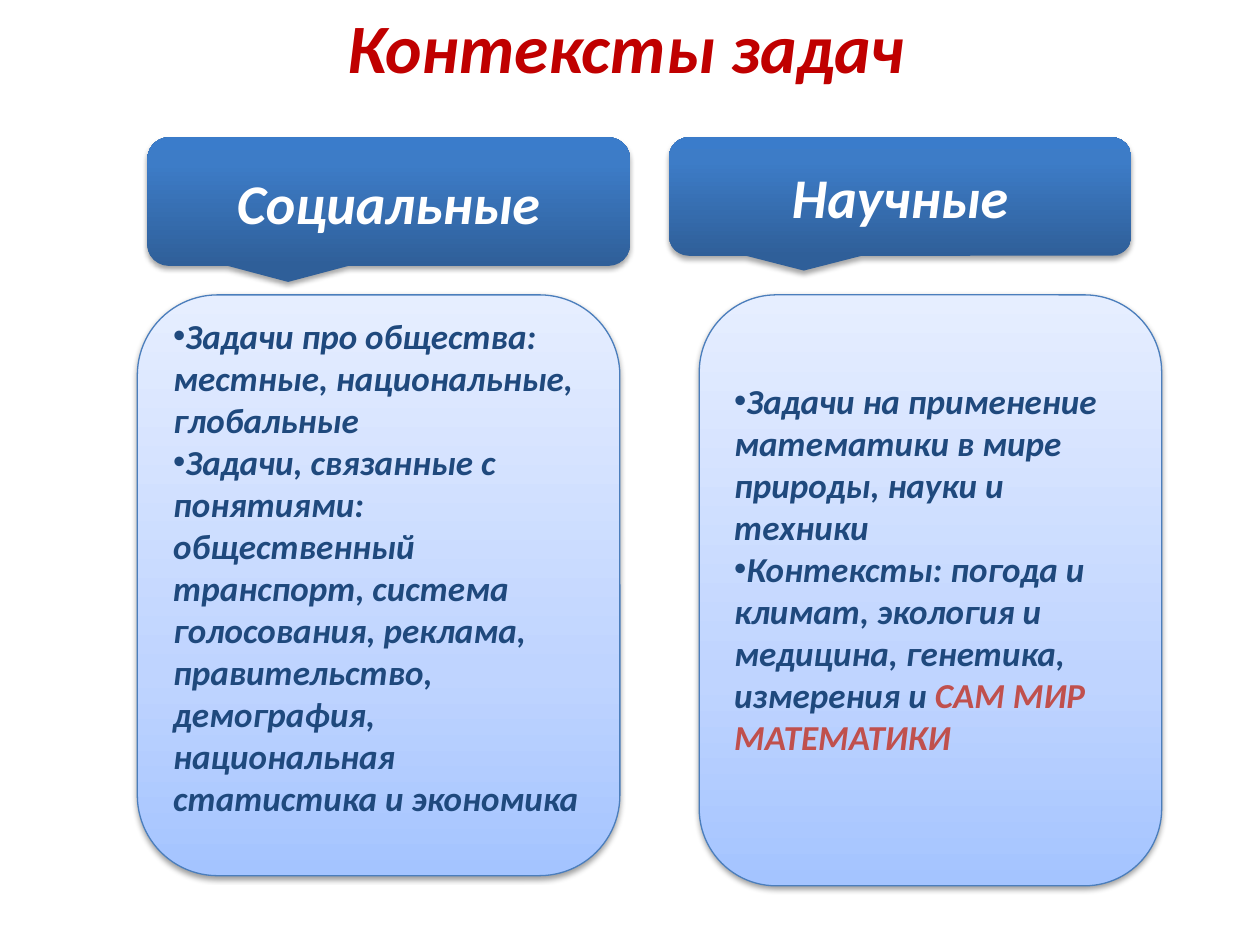
from dataclasses import dataclass

from lxml import etree
from pptx import Presentation
from pptx.dml.color import RGBColor
from pptx.enum.shapes import MSO_SHAPE
from pptx.enum.text import MSO_ANCHOR, PP_ALIGN
from pptx.oxml.ns import qn
from pptx.util import Inches, Pt

CALLOUT = MSO_SHAPE.ROUNDED_RECTANGULAR_CALLOUT
PANEL = MSO_SHAPE.ROUNDED_RECTANGLE
MIDDLE = MSO_ANCHOR.MIDDLE
LEFT, CENTER = PP_ALIGN.LEFT, PP_ALIGN.CENTER
GRID_CELL = 0.1
BLANK_LAYOUT = 6


@dataclass(frozen=True)
class Theme:
    font: str = "Calibri"
    title_size: float = 39.6
    heading_size: float = 32
    body_size: float = 20
    title: str = "C00000"
    heading: str = "FFFFFF"
    body: str = "1F497D"
    accent: str = "C0504D"
    outline: str = "4B7EBC"
    heading_stops: tuple = ((0, "2F5F99"), (80, "3D7CC7"), (100, "3A7CCB"))
    panel_stops: tuple = ((0, "A4C4FF"), (35, "BFD4FF"), (100, "E6EEFF"))


THEME = Theme()

SOCIAL = [
    [("Задачи про общества: местные, национальные, глобальные", None)],
    [("Задачи, связанные с понятиями: общественный транспорт, система "
      "голосования, реклама, правительство, демография, национальная "
      "статистика и экономика", None)],
]
SCIENTIFIC = [
    [("Задачи на применение математики в мире природы, науки и техники", None)],
    [("Контексты: погода и климат, экология и медицина, генетика, "
      "измерения и ", None), ("САМ МИР МАТЕМАТИКИ", THEME.accent)],
]


def grid(*cells):
    return [Inches(cell * GRID_CELL) for cell in cells]


def add_color(parent, color, **modifiers):
    element = etree.SubElement(parent, qn("a:srgbClr"), val=color)
    for name, value in modifiers.items():
        etree.SubElement(element, qn(f"a:{name}"), val=str(value))


def fill_gradient(shape, stops):
    shape.fill.gradient()
    shape.fill.gradient_angle = 90
    stop_list = shape._element.spPr.find(".//" + qn("a:gsLst"))
    for stop in list(stop_list):
        stop_list.remove(stop)
    for position, color in stops:
        stop = etree.SubElement(stop_list, qn("a:gs"), pos=str(position * 1000))
        add_color(stop, color)


def add_shadow(shape, distance, opacity):
    shape.shadow.inherit = False
    effects = shape._element.spPr.find(qn("a:effectLst"))
    shadow = etree.SubElement(
        effects, qn("a:outerShdw"), blurRad=str(Pt(3.1)),
        dist=str(Pt(distance)), dir="5400000", rotWithShape="0")
    add_color(shadow, "000000", alpha=opacity * 1000)


def style_paragraph(paragraph, size, color, alignment):
    paragraph.alignment = alignment
    font = paragraph.font
    font.name, font.size = THEME.font, Pt(size)
    font.bold = font.italic = True
    font.color.rgb = RGBColor.from_string(color)


def write_line(shape, text, size, color):
    frame = shape.text_frame
    frame.word_wrap, frame.vertical_anchor = True, MIDDLE
    frame.text = text
    style_paragraph(frame.paragraphs[0], size, color, CENTER)


def add_title(slide, text):
    box = slide.shapes.add_textbox(*grid(4.7, 0, 90, 7.2))
    write_line(box, text, THEME.title_size, THEME.title)


def add_heading(slide, cells, text):
    callout = slide.shapes.add_shape(CALLOUT, *grid(*cells))
    fill_gradient(callout, THEME.heading_stops)
    callout.line.fill.background()
    add_shadow(callout, 1.8, 35)
    write_line(callout, text, THEME.heading_size, THEME.heading)


def add_panel(slide, cells, items, bottom_margin):
    panel = slide.shapes.add_shape(PANEL, *grid(*cells))
    fill_gradient(panel, THEME.panel_stops)
    panel.line.color.rgb = RGBColor.from_string(THEME.outline)
    panel.line.width = Pt(0.75)
    add_shadow(panel, 1.6, 38)
    frame = panel.text_frame
    frame.word_wrap, frame.vertical_anchor = True, MIDDLE
    frame.margin_bottom = Inches(bottom_margin)
    for index, runs in enumerate(items):
        paragraph = frame.add_paragraph() if index else frame.paragraphs[0]
        properties = paragraph._p.get_or_add_pPr()
        etree.SubElement(properties, qn("a:buFont"), typeface="Arial")
        etree.SubElement(properties, qn("a:buChar"), char="•")
        style_paragraph(paragraph, THEME.body_size, THEME.body, LEFT)
        for text, color in runs:
            run = paragraph.add_run()
            run.text = text
            if color:
                run.font.color.rgb = RGBColor.from_string(color)


def main():
    presentation = Presentation()
    presentation.slide_width, presentation.slide_height = grid(100, 75)
    slide = presentation.slides.add_slide(presentation.slide_layouts[BLANK_LAYOUT])
    add_title(slide, "Контексты задач")
    add_heading(slide, (11.7, 10.9, 38.3, 10.2), "Социальные")
    add_heading(slide, (53.1, 10.9, 36.7, 9.4), "Научные")
    add_panel(slide, (10.9, 23.4, 38.3, 46.1), SOCIAL, 0.35)
    add_panel(slide, (55.5, 23.4, 36.7, 46.9), SCIENTIFIC, 0.39)
    presentation.save("out.pptx")


if __name__ == "__main__":
    main()
